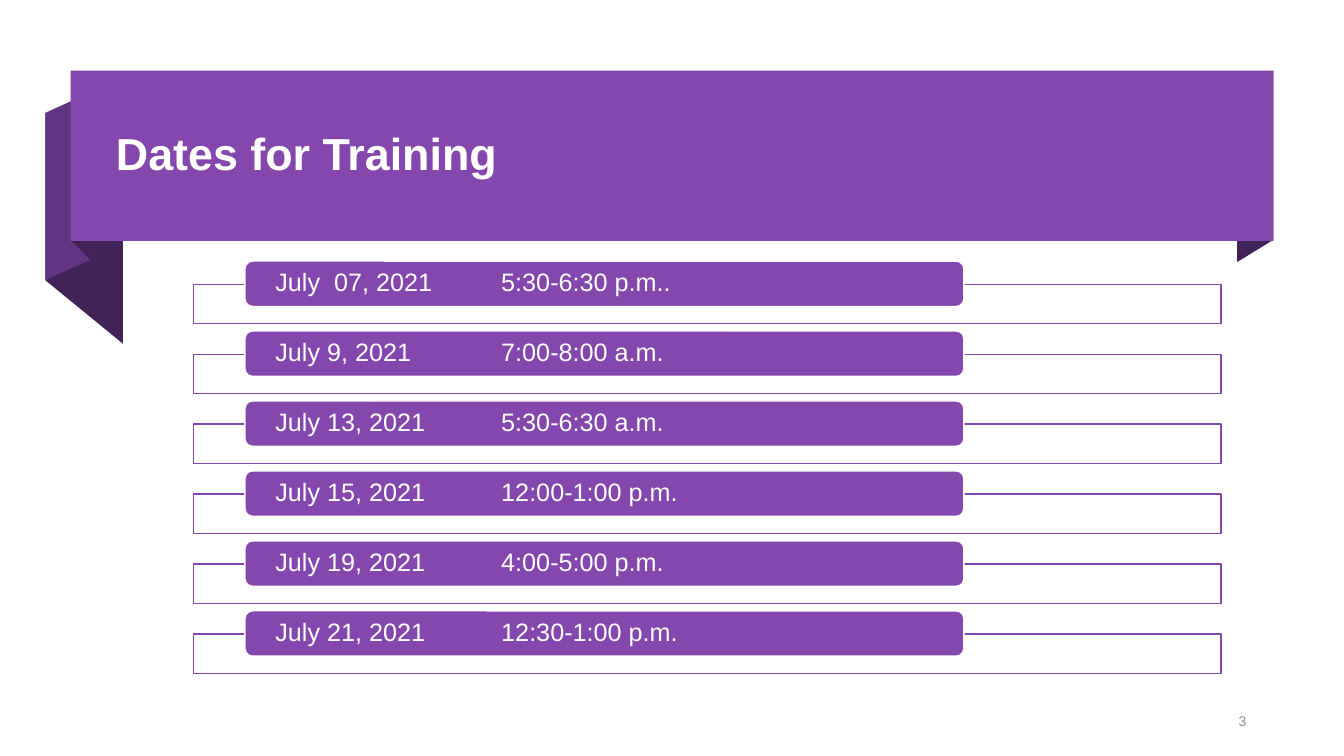
from dataclasses import dataclass

from lxml.etree import SubElement
from pptx import Presentation
from pptx.dml.color import RGBColor
from pptx.enum.shapes import MSO_SHAPE as Shape
from pptx.enum.text import MSO_ANCHOR as Anchor, MSO_AUTO_SIZE as AutoSize, PP_ALIGN as Align
from pptx.oxml.ns import qn
from pptx.util import Inches, Pt


@dataclass(frozen=True)
class Theme:
    font: str = "Arial"
    purple: str = "8347AD"
    mid: str = "623582"
    dark: str = "412357"
    white: str = "FFFFFF"
    grey: str = "8C8C8C"
    title: int = 32
    body: int = 18
    number: int = 10


THEME = Theme()

RIBBON_FOLDS = [
    (THEME.dark, [(1.22, 3.41), (0.45, 2.78), (0.45, 1.12), (1.22, 1.75)]),
    (THEME.mid, [(0.89, 2.58), (0.45, 2.78), (0.45, 1.12), (0.89, 0.92)]),
    (THEME.dark, [(0.89, 2.57), (0.71, 2.39), (0.71, 0.7), (0.89, 0.89)]),
    (THEME.dark, [(12.63, 2.38), (12.27, 2.6), (12.27, 0.91), (12.63, 0.7)]),
]

SESSIONS = [
    ("July  07, 2021", "5:30-6:30 p.m.."),
    ("July 9, 2021", "7:00-8:00 a.m."),
    ("July 13, 2021", "5:30-6:30 a.m."),
    ("July 15, 2021", "12:00-1:00 p.m."),
    ("July 19, 2021", "4:00-5:00 p.m."),
    ("July 21, 2021", "12:30-1:00 p.m."),
]
FIRST_TOP = 2.59
ROW_PITCH = 3.47 / 5
TIME_TAB = 2.24


def paint(sp, fill, line=None):
    sp.shadow.inherit = False
    sp.fill.solid()
    sp.fill.fore_color.rgb = RGBColor.from_string(fill)
    if line:
        sp.line.color.rgb = RGBColor.from_string(line)
        sp.line.width = Pt(1)
    else:
        sp.line.fill.background()


def add_box(slide, kind, left, top, width, height, fill, line=None):
    sp = slide.shapes.add_shape(kind, Inches(left), Inches(top), Inches(width), Inches(height))
    paint(sp, fill, line)
    return sp


def add_fold(slide, points, fill):
    start, *rest = [(Inches(x), Inches(y)) for x, y in points]
    builder = slide.shapes.build_freeform(*start)
    builder.add_line_segments(rest, close=True)
    paint(builder.convert_to_shape(), fill)


def write(sp, text, size, color=THEME.white, bold=False, align=Align.LEFT,
          spacing=None, inset=None, tab=None):
    """Put one formatted, vertically centred paragraph into a shape."""
    tf = sp.text_frame
    tf.word_wrap = True
    tf.auto_size = AutoSize.NONE
    tf.vertical_anchor = Anchor.MIDDLE
    if inset is not None:
        tf.margin_left = tf.margin_right = Inches(inset)
        tf.margin_top = tf.margin_bottom = 0
    p = tf.paragraphs[0]
    p.alignment = align
    if tab:
        tabs = SubElement(p._p.get_or_add_pPr(), qn("a:tabLst"))
        SubElement(tabs, qn("a:tab"), pos=str(Inches(tab)), algn="l")
    if spacing:
        p.line_spacing = spacing
    r = p.add_run()
    r.text = text
    r.font.name = THEME.font
    r.font.size = Pt(size)
    r.font.bold = bold
    r.font.color.rgb = RGBColor.from_string(color)


def add_title(slide, text):
    sp = slide.shapes.title
    sp.left, sp.top, sp.width, sp.height = map(Inches, (1.05, 0.88, 11.23, 1.33))
    write(sp, text, THEME.title, bold=True, spacing=0.9)


def add_banner(slide):
    for fill, points in RIBBON_FOLDS:
        add_fold(slide, points, fill)
    add_box(slide, Shape.RECTANGLE, 0.7, 0.7, 11.93, 1.69, THEME.purple)
    # The title placeholder comes first in the tree, so it moves above the banner.
    slide.shapes._spTree.append(slide.shapes.title._element)


def add_session(slide, top, date, time):
    add_box(slide, Shape.RECTANGLE, 1.92, top + 0.23, 10.19, 0.39, THEME.white, THEME.purple)
    bar = add_box(slide, Shape.ROUNDED_RECTANGLE, 2.43, top, 7.13, 0.45,
                  THEME.purple, THEME.white)
    write(bar, f"{date}\t{time}", THEME.body, spacing=0.9, inset=0.28, tab=TIME_TAB)


def add_slide_number(slide, number):
    sp = slide.shapes.add_textbox(Inches(11.71), Inches(6.98), Inches(0.75), Inches(0.35))
    write(sp, number, THEME.number, THEME.grey, align=Align.RIGHT)


def main():
    prs = Presentation()
    prs.slide_width, prs.slide_height = Inches(13.33), Inches(7.5)
    slide = prs.slides.add_slide(prs.slide_layouts[5])
    add_banner(slide)
    add_title(slide, "Dates for Training")
    for row, (date, time) in enumerate(SESSIONS):
        add_session(slide, FIRST_TOP + row * ROW_PITCH, date, time)
    add_slide_number(slide, "3")
    prs.save("out.pptx")


if __name__ == "__main__":
    main()
